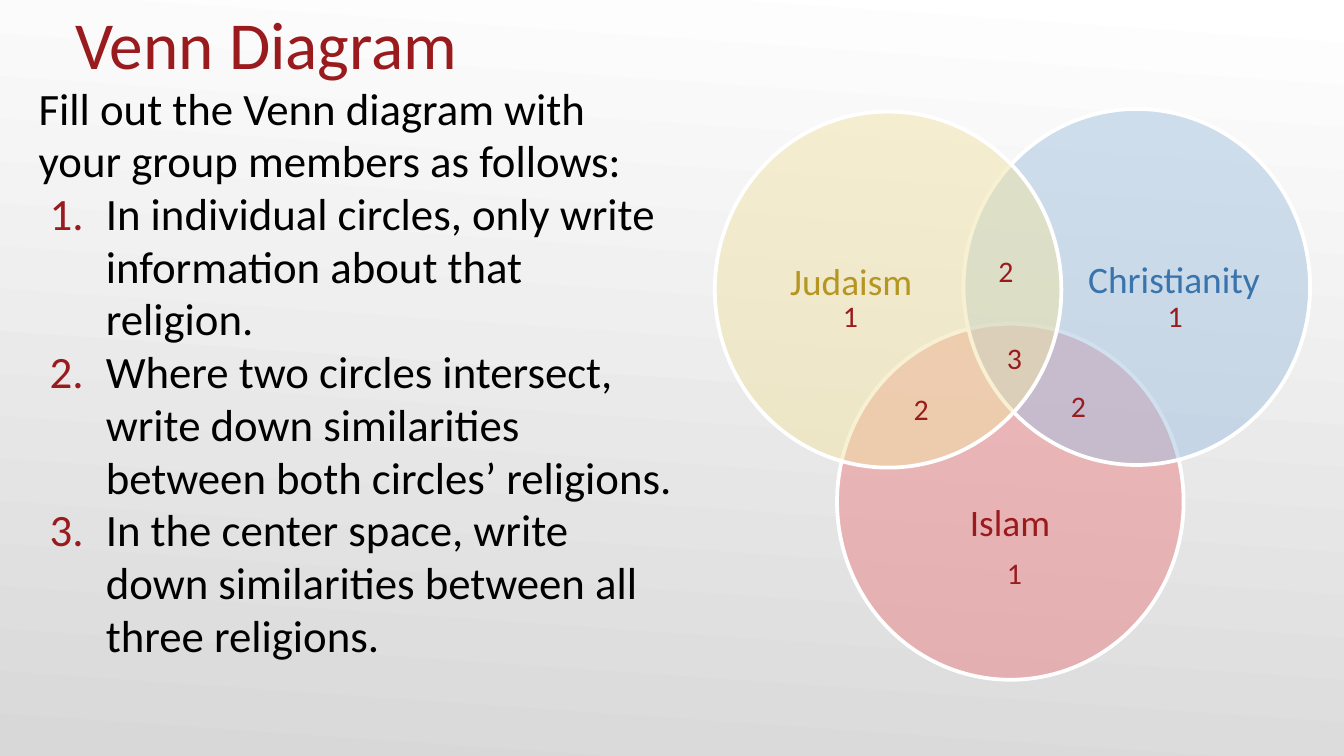
from dataclasses import dataclass

from lxml import etree
from pptx import Presentation
from pptx.dml.color import RGBColor
from pptx.enum.shapes import MSO_SHAPE
from pptx.enum.text import MSO_ANCHOR as Anchor, MSO_AUTO_SIZE as AutoSize, PP_ALIGN as Align
from pptx.oxml.ns import qn
from pptx.util import Cm, Pt


@dataclass(frozen=True)
class Theme:
    font: str = "Calibri"
    red: str = "991B1E"
    black: str = "000000"
    white: str = "FFFFFF"
    grey: str = "D8D8D8"
    title: int = 36
    body: int = 24
    label: int = 20
    count: int = 16


theme = Theme()


def add_span(para, text, size, color):
    span = para.add_run()
    span.text = text
    span.font.name = theme.font
    span.font.size = Pt(size)
    span.font.color.rgb = RGBColor.from_string(color)


def set_frame(frame, anchor, inset_x, inset_y):
    frame.word_wrap = True
    frame.auto_size = AutoSize.NONE
    frame.vertical_anchor = anchor
    frame.margin_left = frame.margin_right = Cm(inset_x)
    frame.margin_top = frame.margin_bottom = Cm(inset_y)


deck = Presentation()
deck.slide_width, deck.slide_height = Cm(25.4), Cm(14.29)
page = deck.slides.add_slide(deck.slide_layouts[1])

# Background gradient
backdrop = page.background.fill
backdrop.gradient()
backdrop.gradient_angle = 266
for stop, color in zip(backdrop.gradient_stops, (theme.white, theme.grey)):
    stop.color.rgb = RGBColor.from_string(color)

# Title
title = page.shapes.title
title.left, title.top, title.width, title.height = Cm(1.17), Cm(0.36), Cm(22.86), Cm(1.45)
set_frame(title.text_frame, Anchor.BOTTOM, 0.25, 0.25)
para = title.text_frame.paragraphs[0]
para.alignment = Align.LEFT
add_span(para, "Venn Diagram", theme.title, theme.red)

# Instructions: an introduction and a numbered list
body = page.placeholders[1]
body.left, body.top, body.width, body.height = Cm(0.48), Cm(1.32), Cm(12.5), Cm(11.63)
set_frame(body.text_frame, Anchor.TOP, 0.25, 0.25)
instructions = [
    "Fill out the Venn diagram with your group members as follows:",
    "In individual circles, only write information about that religion.",
    "Where two circles intersect, write down similarities between both circles’ religions.",
    "In the center space, write down similarities between all three religions.",
]
for number, text in enumerate(instructions):
    para = body.text_frame.add_paragraph() if number else body.text_frame.paragraphs[0]
    props = para._p.get_or_add_pPr()
    props.set("marL", str(Cm(1.27) if number else 0))
    props.set("indent", str(-Cm(1.06) if number else 0))
    if number:
        bullet_color = etree.SubElement(props, qn("a:buClr"))
        etree.SubElement(bullet_color, qn("a:srgbClr"), val=theme.red)
        etree.SubElement(props, qn("a:buFont"), typeface=theme.font)
        etree.SubElement(props, qn("a:buAutoNum"), type="arabicPeriod")
    else:
        etree.SubElement(props, qn("a:buNone"))
    para.alignment = Align.LEFT
    para.space_before = para.space_after = Pt(0)
    para.line_spacing = 0.98
    add_span(para, text, theme.body, theme.black)

# Circles: left, top, half-transparent fill
circles = [
    (15.82, 6.12, "EA8186"),
    (18.21, 2.06, "A2C2E1"),
    (13.51, 2.11, "F1E3A6"),
]
for left, top, color in circles:
    circle = page.shapes.add_shape(MSO_SHAPE.OVAL, Cm(left), Cm(top), Cm(6.55), Cm(6.73))
    circle.shadow.inherit = False
    circle.fill.solid()
    circle.fill.fore_color.rgb = RGBColor.from_string(color)
    tint = circle._element.spPr.find(qn("a:solidFill"))[0]
    etree.SubElement(tint, qn("a:alpha"), val="50000")
    circle.line.color.rgb = RGBColor.from_string(theme.white)
    circle.line.width = Pt(2)

# Religion names: centre x, centre y, colour
names = [
    ("Islam", 19.09, 9.86, theme.red),
    ("Christianity", 22.19, 5.26, "3974AD"),
    ("Judaism", 16.09, 5.31, "B49620"),
]
for name, x, y, color in names:
    box = page.shapes.add_textbox(Cm(x - 1.97), Cm(y - 0.5), Cm(3.94), Cm(1))
    set_frame(box.text_frame, Anchor.MIDDLE, 0, 0)
    para = box.text_frame.paragraphs[0]
    para.alignment = Align.CENTER
    add_span(para, name, theme.label, color)

# Instruction numbers in the regions: left, top
counts = [
    ("1", 15.65, 5.49),
    ("2", 16.99, 7.26),
    ("3", 18.75, 6.3),
    ("1", 21.79, 5.49),
    ("2", 19.96, 7.19),
    ("2", 18.59, 4.65),
    ("1", 18.75, 10.36),
]
for count, left, top in counts:
    box = page.shapes.add_textbox(Cm(left), Cm(top), Cm(0.84), Cm(0.94))
    set_frame(box.text_frame, Anchor.TOP, 0.25, 0.13)
    para = box.text_frame.paragraphs[0]
    para.alignment = Align.CENTER
    add_span(para, count, theme.count, theme.red)

deck.save("out.pptx")
